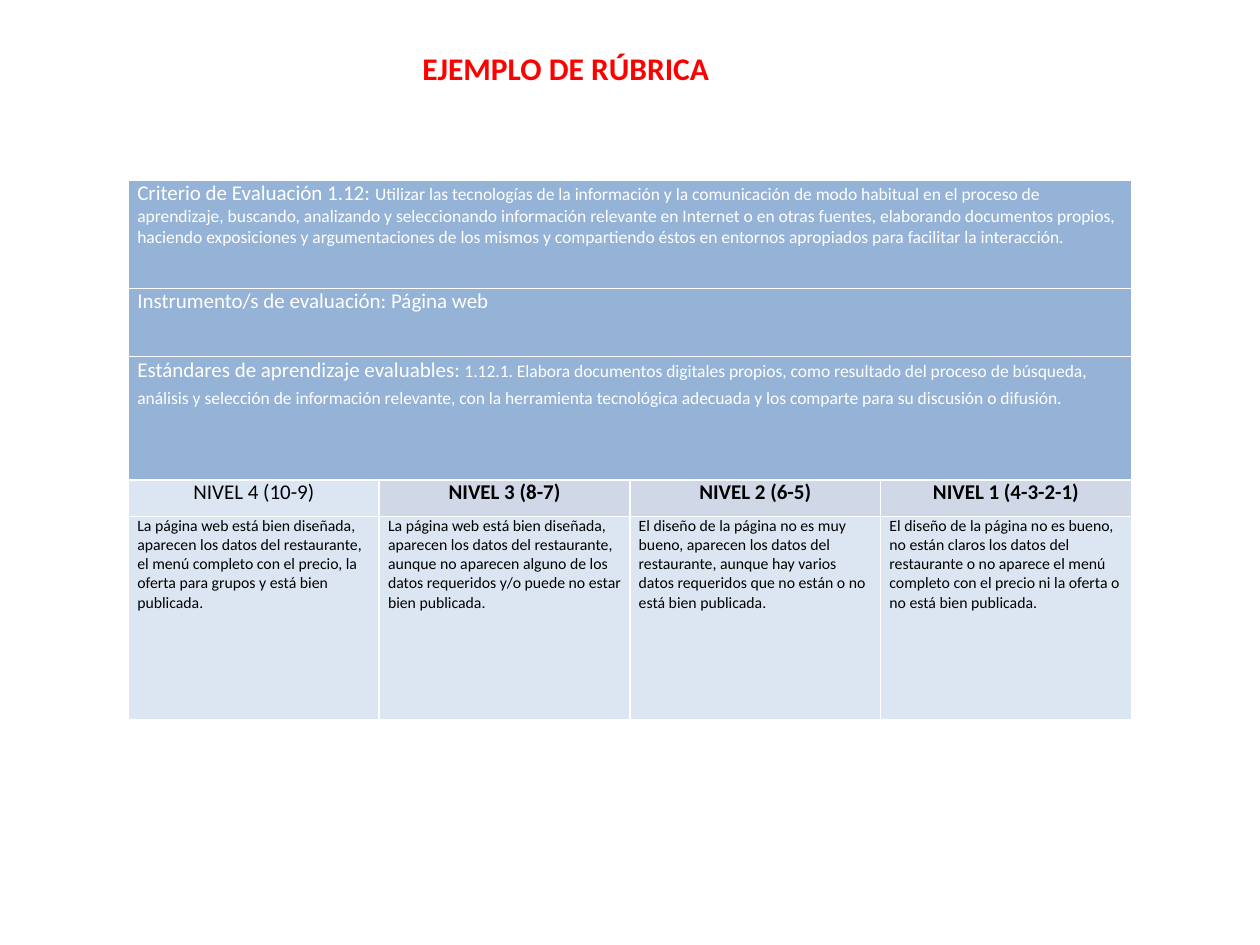
from lxml import etree
from pptx import Presentation
from pptx.dml.color import RGBColor
from pptx.enum import text
from pptx.oxml.ns import qn
from pptx.util import Inches, Pt

WHITE = RGBColor(0xFF, 0xFF, 0xFF)
BLACK = RGBColor(0, 0, 0)
RED = RGBColor(0xFF, 0, 0)
BLUE = RGBColor(0x95, 0xB3, 0xD7)
PALE_BLUE = RGBColor(0xDC, 0xE6, 0xF2)
GREY_BLUE = RGBColor(0xD0, 0xD8, 0xE8)
FONT = "Calibri"

ROW_HEIGHTS = [0.86, 0.54, 0.98, 0.29, 1.61]

# Each heading row: label at 12 pt, then detail at 10 pt
HEADINGS = [
    ("Criterio de Evaluación 1.12: ",
     "Utilizar las tecnologías de la información y la comunicación de modo habitual "
     "en el proceso de aprendizaje, buscando, analizando y seleccionando información "
     "relevante en Internet o en otras fuentes, elaborando documentos propios, haciendo "
     "exposiciones y argumentaciones de los mismos y compartiendo éstos en entornos "
     "apropiados para facilitar la interacción."),
    ("Instrumento/s de evaluación: Página web", ""),
    ("Estándares de aprendizaje evaluables:",
     " 1.12.1. Elabora documentos digitales propios, como resultado del proceso de "
     "búsqueda, análisis y selección de información relevante, con la herramienta "
     "tecnológica adecuada y los comparte para su discusión o difusión."),
]
STANDARDS_ROW = 2

LEVELS = [
    ("NIVEL 4 (10-9)",
     "La página web está bien diseñada, aparecen los datos del restaurante, el menú "
     "completo con el precio, la oferta para grupos y está bien publicada."),
    ("NIVEL 3 (8-7)",
     "La página web está bien diseñada, aparecen los datos del restaurante, aunque no "
     "aparecen alguno de los datos requeridos y/o puede no estar bien publicada."),
    ("NIVEL 2 (6-5)",
     "El diseño de la página no es muy bueno, aparecen los datos del restaurante, aunque "
     "hay varios datos requeridos que no están o no está bien publicada."),
    ("NIVEL 1 (4-3-2-1)",
     "El diseño de la página no es bueno, no están claros los datos del restaurante o no "
     "aparece el menú completo con el precio ni la oferta o no está bien publicada."),
]


def set_font(font, size, color, bold=False):
    font.name = FONT
    font.size = Pt(size)
    font.color.rgb = color
    font.bold = bold


def style_cell(cell, fill):
    """Set margins, white one-point borders and fill."""
    cell.margin_left = cell.margin_right = Inches(0.07)
    cell.margin_top = cell.margin_bottom = 0
    properties = cell._tc.get_or_add_tcPr()
    for side in ("lnL", "lnR", "lnT", "lnB"):
        line = etree.SubElement(properties, qn(f"a:{side}"), w=str(Pt(1)))
        solid = etree.SubElement(line, qn("a:solidFill"))
        etree.SubElement(solid, qn("a:srgbClr"), val=str(WHITE))
    cell.fill.solid()
    cell.fill.fore_color.rgb = fill


def add_title(slide, left, top, width, height):
    title = slide.shapes.title
    title.left, title.top, title.width, title.height = left, top, width, height
    frame = title.text_frame
    frame.text = "EJEMPLO DE RÚBRICA"
    frame.vertical_anchor = text.MSO_ANCHOR.MIDDLE
    paragraph = frame.paragraphs[0]
    paragraph.alignment = text.PP_ALIGN.CENTER
    set_font(paragraph.font, 18, RED, bold=True)


def fill_headings(table):
    last_column = len(LEVELS) - 1
    for row, parts in enumerate(HEADINGS):
        for column in range(len(LEVELS)):
            style_cell(table.cell(row, column), BLUE)
        cell = table.cell(row, 0)
        cell.merge(table.cell(row, last_column))
        paragraph = cell.text_frame.paragraphs[0]
        for part, size in zip(parts, (12, 10)):
            if part:
                run = paragraph.add_run()
                run.text = part
                set_font(run.font, size, WHITE)
        if row == STANDARDS_ROW:
            paragraph.line_spacing = Pt(15)


def fill_levels(table):
    name_row = len(HEADINGS)
    for column, (name, description) in enumerate(LEVELS):
        first = column == 0
        name_cell = table.cell(name_row, column)
        style_cell(name_cell, PALE_BLUE if first else GREY_BLUE)
        name_cell.text = name
        paragraph = name_cell.text_frame.paragraphs[0]
        paragraph.alignment = text.PP_ALIGN.CENTER
        set_font(paragraph.font, 12, BLACK, bold=not first)

        description_cell = table.cell(name_row + 1, column)
        style_cell(description_cell, PALE_BLUE)
        description_cell.text = description
        set_font(description_cell.text_frame.paragraphs[0].font, 9, BLACK)


def add_rubric(slide, left, top, width):
    height = Inches(sum(ROW_HEIGHTS))
    table = slide.shapes.add_table(
        len(ROW_HEIGHTS), len(LEVELS), left, top, width, height).table
    for row, row_height in zip(table.rows, ROW_HEIGHTS):
        row.height = Inches(row_height)
    fill_headings(table)
    fill_levels(table)


def main():
    presentation = Presentation()
    presentation.slide_width = Inches(10)
    presentation.slide_height = Inches(7.5)
    slide = presentation.slides.add_slide(presentation.slide_layouts[5])
    add_title(slide, Inches(0.71), Inches(0.34), Inches(7.56), Inches(0.4))
    add_rubric(slide, Inches(1.02), Inches(1.43), Inches(7.96))
    presentation.save("out.pptx")


if __name__ == "__main__":
    main()
